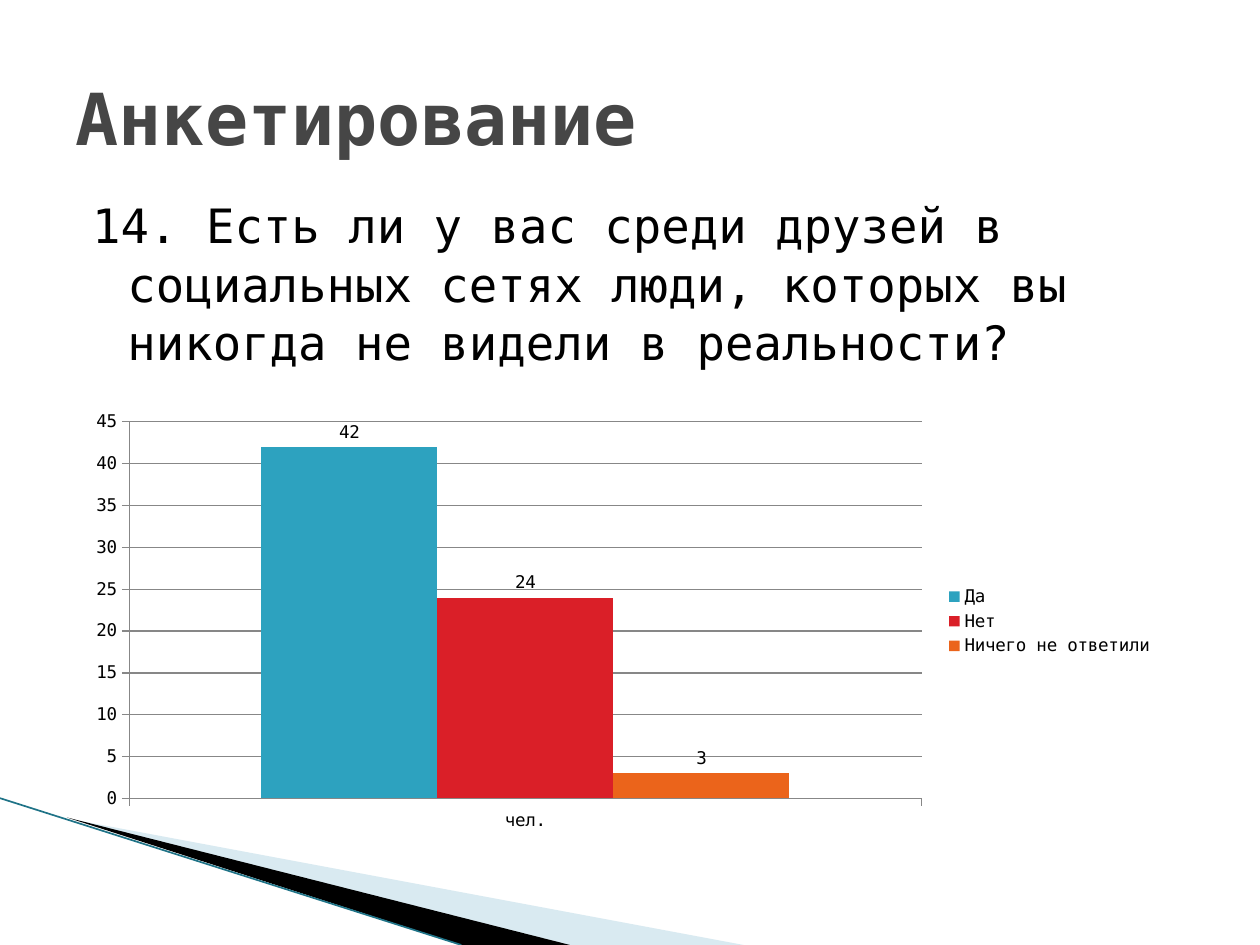
from dataclasses import dataclass

from lxml.etree import SubElement
from pptx import Presentation
from pptx.chart.data import CategoryChartData
from pptx.dml.color import RGBColor
from pptx.enum.chart import (XL_CHART_TYPE, XL_LABEL_POSITION,
                             XL_LEGEND_POSITION, XL_TICK_MARK)
from pptx.enum.shapes import MSO_CONNECTOR
from pptx.enum.text import MSO_ANCHOR, MSO_AUTO_SIZE, PP_ALIGN
from pptx.oxml.ns import qn
from pptx.util import Cm, Pt


@dataclass(frozen=True)
class Theme:
    font: str = "DejaVu Sans Mono"
    title: str = "464646"
    text: str = "000000"
    grid: str = "878787"
    edge: str = "1F7387"
    big: int = 41
    body: int = 27
    small: int = 10


@dataclass(frozen=True)
class Wedge:
    points: tuple
    color: str
    alpha: int = 100


@dataclass(frozen=True)
class Answer:
    name: str
    count: int
    color: str


THEME = Theme()
WEDGES = (
    Wedge(((1.4, 16.51), (14.99, 19.05), (11.48, 19.05)), "A0CBDC", 40),
    Wedge(((1.35, 16.48), (11.49, 19.05), (9.31, 19.05)), "000000"),
)
ANSWERS = (
    Answer("Да", 42, "2DA2BF"),
    Answer("Нет", 24, "DA1F28"),
    Answer("Ничего не ответили", 3, "EB641B"),
)


def style(font, size: int, color: str, bold: bool = False) -> None:
    font.name, font.size, font.bold = THEME.font, Pt(size), bold
    font.color.rgb = RGBColor.from_string(color)


def place(shape, left: float, top: float, width: float, height: float) -> None:
    shape.left, shape.top = Cm(left), Cm(top)
    shape.width, shape.height = Cm(width), Cm(height)


def draw_wedge(slide, wedge: Wedge) -> None:
    first, *rest = [(Cm(x), Cm(y)) for x, y in wedge.points]
    path = slide.shapes.build_freeform(*first)
    path.add_line_segments(rest)
    shape = path.convert_to_shape()
    shape.shadow.inherit = False
    shape.line.fill.background()
    shape.fill.solid()
    shape.fill.fore_color.rgb = RGBColor.from_string(wedge.color)
    if wedge.alpha < 100:
        tint = next(shape.element.spPr.iter(qn("a:srgbClr")))
        SubElement(tint, qn("a:alpha")).set("val", str(wedge.alpha * 1000))


def draw_edge(slide) -> None:
    edge = slide.shapes.add_connector(
        MSO_CONNECTOR.STRAIGHT, Cm(0), Cm(16.09), Cm(9.3), Cm(19.05))
    edge.line.color.rgb = RGBColor.from_string(THEME.edge)
    edge.line.width = Pt(0.95)
    SubElement(edge.element.spPr, qn("a:effectLst"))


def draw_title(slide, text: str) -> None:
    title = slide.shapes.title
    place(title, 1.27, 0.76, 22.86, 3.18)
    frame = title.text_frame
    frame.text = text
    frame.auto_size = MSO_AUTO_SIZE.NONE
    frame.vertical_anchor = MSO_ANCHOR.MIDDLE
    line = frame.paragraphs[0]
    line.alignment = PP_ALIGN.LEFT
    style(line.runs[0].font, THEME.big, THEME.title, True)


def draw_question(slide, text: str) -> None:
    box = slide.shapes.add_textbox(Cm(1.3), Cm(3.8), Cm(22.86), Cm(4.2))
    frame = box.text_frame
    frame.word_wrap = True
    frame.text = text
    line = frame.paragraphs[0]
    line.line_spacing = 1.03
    # Hanging indent
    props = line._p.get_or_add_pPr()
    props.set("marL", str(Cm(1.02)))
    props.set("indent", str(Cm(-0.71)))
    style(line.runs[0].font, THEME.body, THEME.text)


def draw_chart(slide, answers: tuple) -> None:
    data = CategoryChartData()
    data.categories = ["чел."]
    for answer in answers:
        data.add_series(answer.name, [answer.count])
    chart = slide.shapes.add_chart(
        XL_CHART_TYPE.COLUMN_CLUSTERED,
        Cm(1.5), Cm(8.13), Cm(22), Cm(8.79), data).chart
    style(chart.font, THEME.small, THEME.text)
    chart.has_title = False
    chart.has_legend = True
    chart.legend.position = XL_LEGEND_POSITION.RIGHT
    chart.legend.include_in_layout = False

    # Axes and grid
    grey = RGBColor.from_string(THEME.grid)
    scale = chart.value_axis
    scale.minimum_scale, scale.maximum_scale, scale.major_unit = 0, 45, 5
    scale.has_major_gridlines = True
    for axis in (chart.category_axis, scale):
        axis.major_tick_mark = XL_TICK_MARK.OUTSIDE
        axis.format.line.color.rgb = grey
    scale.major_gridlines.format.line.color.rgb = grey

    # Bars and their values
    plot = chart.plots[0]
    plot.vary_by_categories = False
    plot.gap_width, plot.overlap = 150, 0
    for bar, answer in zip(plot.series, answers):
        bar.format.fill.solid()
        bar.format.fill.fore_color.rgb = RGBColor.from_string(answer.color)
        labels = bar.data_labels
        labels.show_value = True
        labels.position = XL_LABEL_POSITION.OUTSIDE_END
        style(labels.font, THEME.small, THEME.text)


def main() -> None:
    deck = Presentation()
    deck.slide_width, deck.slide_height = Cm(25.4), Cm(19.05)
    slide = deck.slides.add_slide(deck.slide_layouts[5])
    # Corner decoration
    for wedge in WEDGES:
        draw_wedge(slide, wedge)
    draw_edge(slide)
    # Content
    draw_title(slide, "Анкетирование")
    draw_question(slide, "14. Есть ли у вас среди друзей в социальных сетях "
                         "люди, которых вы никогда не видели в реальности?")
    draw_chart(slide, ANSWERS)
    deck.save("out.pptx")


if __name__ == "__main__":
    main()
